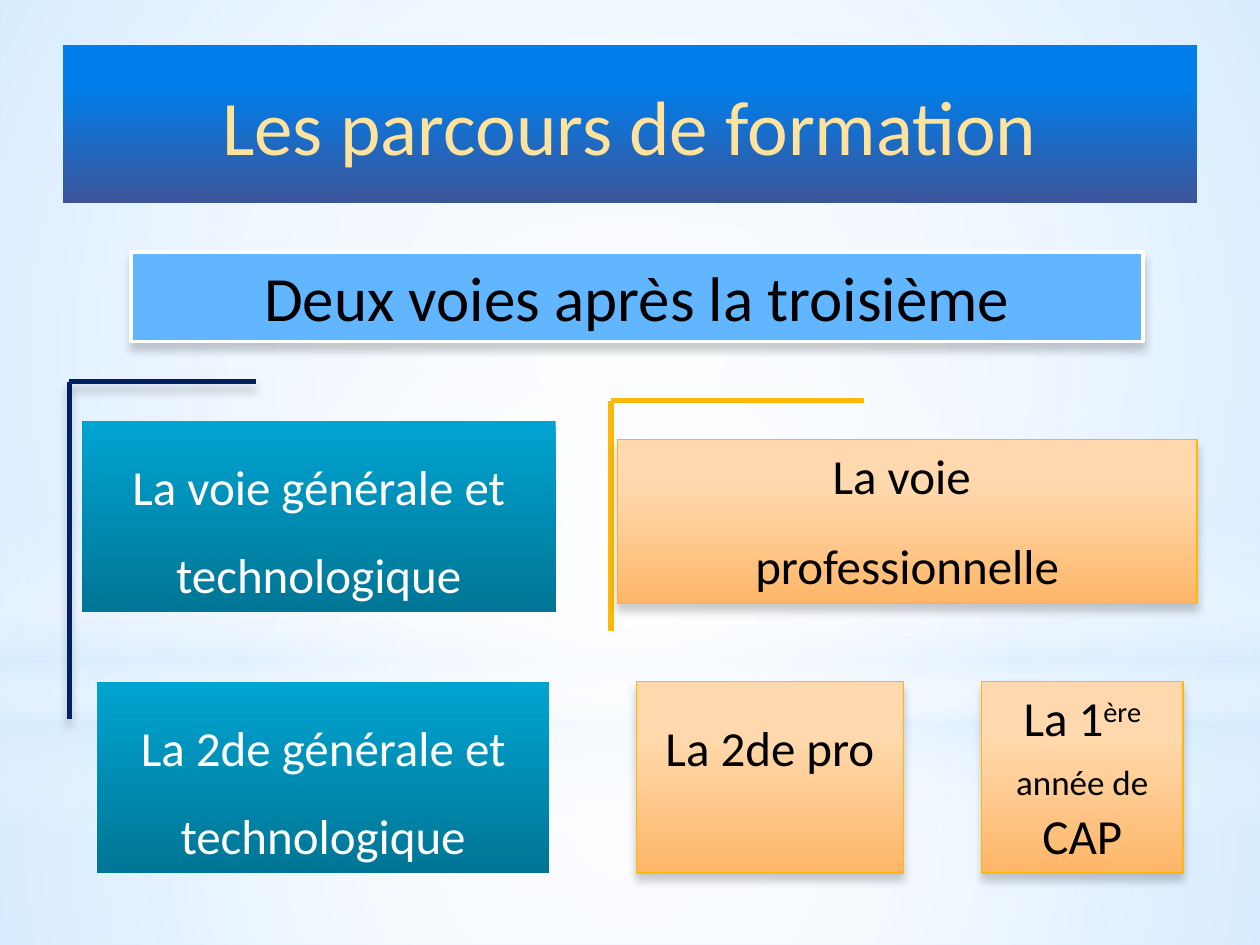
from lxml import etree
from pptx import Presentation
from pptx.dml.color import RGBColor
from pptx.enum.shapes import MSO_CONNECTOR, MSO_SHAPE
from pptx.enum.text import MSO_ANCHOR, PP_ALIGN
from pptx.oxml.ns import qn
from pptx.util import Pt

RECTANGLE, OVAL = MSO_SHAPE.RECTANGLE, MSO_SHAPE.OVAL
STRAIGHT = MSO_CONNECTOR.STRAIGHT
CENTER = PP_ALIGN.CENTER
TOP, MIDDLE = MSO_ANCHOR.TOP, MSO_ANCHOR.MIDDLE

WHITE, BLACK, PALE_BLUE = "FFFFFF", "000000", "D6ECFF"
NAVY, GOLD = "002060", "FEB80A"
TEAL_STOPS = [(0, "00A4D1", 100), (100, "007595", 100)]
ORANGE_STOPS = [(0, "FFD9AD", 100), (28, "FFD9AD", 100), (100, "FEB668", 100)]
TITLE_STOPS = [(25, "007EEB", 100), (100, "3C559A", 100)]
TEAL = {"stops": TEAL_STOPS, "color": WHITE}
ORANGE = {"stops": ORANGE_STOPS, "color": BLACK, "border": (GOLD, 0.75)}
ROW_TOP, ROW_HEIGHT = 389.5, 109.4


def rgb(value):
    return RGBColor.from_string(value)


def child(parent, tag, **attributes):
    values = {name: str(value) for name, value in attributes.items()}
    return etree.SubElement(parent, qn(tag), values)


def set_format(target, values):
    for name, value in values.items():
        setattr(target, name, value)


def add_color(parent, color, opacity):
    node = child(parent, "a:srgbClr", val=color)
    if opacity < 100:
        child(node, "a:alpha", val=opacity * 1000)


def fill_gradient(shape, stops, radial=False):
    """Stops are (position, colour, opacity), from the top or the centre."""
    shape.fill.gradient()
    gradient = shape._element.spPr.find(qn("a:gradFill"))
    for node in list(gradient):
        gradient.remove(node)
    stop_list = child(gradient, "a:gsLst")
    for position, color, opacity in stops:
        add_color(child(stop_list, "a:gs", pos=position * 1000), color, opacity)
    if radial:
        focus = child(gradient, "a:path", path="circle")
        child(focus, "a:fillToRect", l=50000, t=50000, r=50000, b=50000)
    else:
        child(gradient, "a:lin", ang=5400000, scaled=0)


def add_shadow(effects):
    shadow = child(effects, "a:outerShdw", blurRad=Pt(5), dist=Pt(4),
                   dir=5400000, rotWithShape=0)
    add_color(shadow, BLACK, 20)


def add_plain_shape(page, kind, frame):
    shape = page.shapes.add_shape(kind, *map(Pt, frame))
    shape.shadow.inherit = False
    shape.line.fill.background()
    return shape


def add_backdrop(page):
    page.background.fill.solid()
    page.background.fill.fore_color.rgb = rgb("DDEEFF")
    layers = [
        (RECTANGLE, (0, 401.8, 720, 138.2), True,
         [(0, WHITE, 91), (37, WHITE, 76), (100, PALE_BLUE, 79)]),
        (RECTANGLE, (0, 0, 720, 401.8), True,
         [(0, WHITE, 89), (48, WHITE, 62), (100, PALE_BLUE, 79)]),
        (RECTANGLE, (0, 296.6, 720, 180), False,
         [(0, WHITE, 0), (29, WHITE, 30), (45, PALE_BLUE, 40),
          (55, WHITE, 26), (65, PALE_BLUE, 60), (100, WHITE, 0)]),
        (OVAL, (0, 126, 720, 401.8), True, [(0, WHITE, 100), (56, WHITE, 0)]),
    ]
    for kind, frame, radial, stops in layers:
        fill_gradient(add_plain_shape(page, kind, frame), stops, radial)


def add_span(para, text, size, color, raised=False):
    span = para.add_run()
    span.text = text
    set_format(span.font, {"name": "Calibri", "size": Pt(size)})
    span.font.color.rgb = rgb(color)
    if raised:
        span.font._element.set("baseline", "30000")


def add_box(page, frame, paragraphs, color, stops=None, solid=None,
            border=None, size=28, line_spacing=1.0, space_before=17.5):
    """Each paragraph is a list of (text, size, raised) or a plain string."""
    box = add_plain_shape(page, RECTANGLE, frame)
    if stops:
        fill_gradient(box, stops)
    else:
        box.fill.solid()
        box.fill.fore_color.rgb = rgb(solid)
    if border:
        box.line.color.rgb = rgb(border[0])
        box.line.width = Pt(border[1])
        add_shadow(box._element.spPr.find(qn("a:effectLst")))
    set_format(box.text_frame, {"word_wrap": True, "vertical_anchor": TOP})
    for index, content in enumerate(paragraphs):
        para = box.text_frame.add_paragraph() if index else box.text_frame.paragraphs[0]
        set_format(para, {"alignment": CENTER, "line_spacing": line_spacing,
                          "space_before": Pt(space_before)})
        spans = [(content, size, False)] if isinstance(content, str) else content
        for text, span_size, raised in spans:
            add_span(para, text, span_size, color, raised)


def add_corner(page, left, top, right, bottom, color, shadow=False):
    """Draw a vertical and a horizontal line from one top-left corner."""
    for end_x, end_y in [(left, bottom), (right, top)]:
        line = page.shapes.add_connector(STRAIGHT, *map(Pt, (left, top, end_x, end_y)))
        line.line.color.rgb = rgb(color)
        line.line.width = Pt(3)
        effects = child(line._element.spPr, "a:effectLst")
        if shadow:
            add_shadow(effects)


def add_title(page, text):
    title = page.shapes.title
    set_format(title, {"left": Pt(36), "top": Pt(26), "width": Pt(648), "height": Pt(90)})
    fill_gradient(title, TITLE_STOPS)
    title.text_frame.vertical_anchor = MIDDLE
    para = title.text_frame.paragraphs[0]
    para.alignment = CENTER
    add_span(para, text, 44, "FFE39D")
    page.shapes._spTree.append(title._element)  # bring in front of the backdrop


def main():
    deck = Presentation()
    set_format(deck, {"slide_width": Pt(720), "slide_height": Pt(540)})
    page = deck.slides.add_slide(deck.slide_layouts[5])
    add_backdrop(page)
    add_title(page, "Les parcours de formation")
    add_box(page, (74.9, 144, 578.2, 51.1), ["Deux voies après la troisième"],
            BLACK, solid="61B6FF", border=(WHITE, 2), size=36, space_before=0)

    add_corner(page, 349.2, 229, 494, 360.7, GOLD)
    add_box(page, (352.8, 251.3, 331.2, 93.6), ["La voie ", "professionnelle"], **ORANGE)
    add_corner(page, 39.6, 218.2, 146.2, 411.1, NAVY, shadow=True)
    add_box(page, (46.8, 240.5, 270.7, ROW_HEIGHT),
            ["La voie générale et technologique"], line_spacing=1.5, **TEAL)

    add_box(page, (55.4, ROW_TOP, 258.5, ROW_HEIGHT),
            ["La 2de générale et technologique"], line_spacing=1.5, **TEAL)
    add_box(page, (363.6, ROW_TOP, 152.6, ROW_HEIGHT), ["La 2de pro"],
            line_spacing=1.5, **ORANGE)
    first_year = [("La 1", 28, False), ("ère ", 28, True),
                  ("année de", 20, False), (" CAP", 28, False)]
    add_box(page, (560.9, ROW_TOP, 115.2, ROW_HEIGHT), [first_year], **ORANGE)
    deck.save("out.pptx")


if __name__ == "__main__":
    main()
